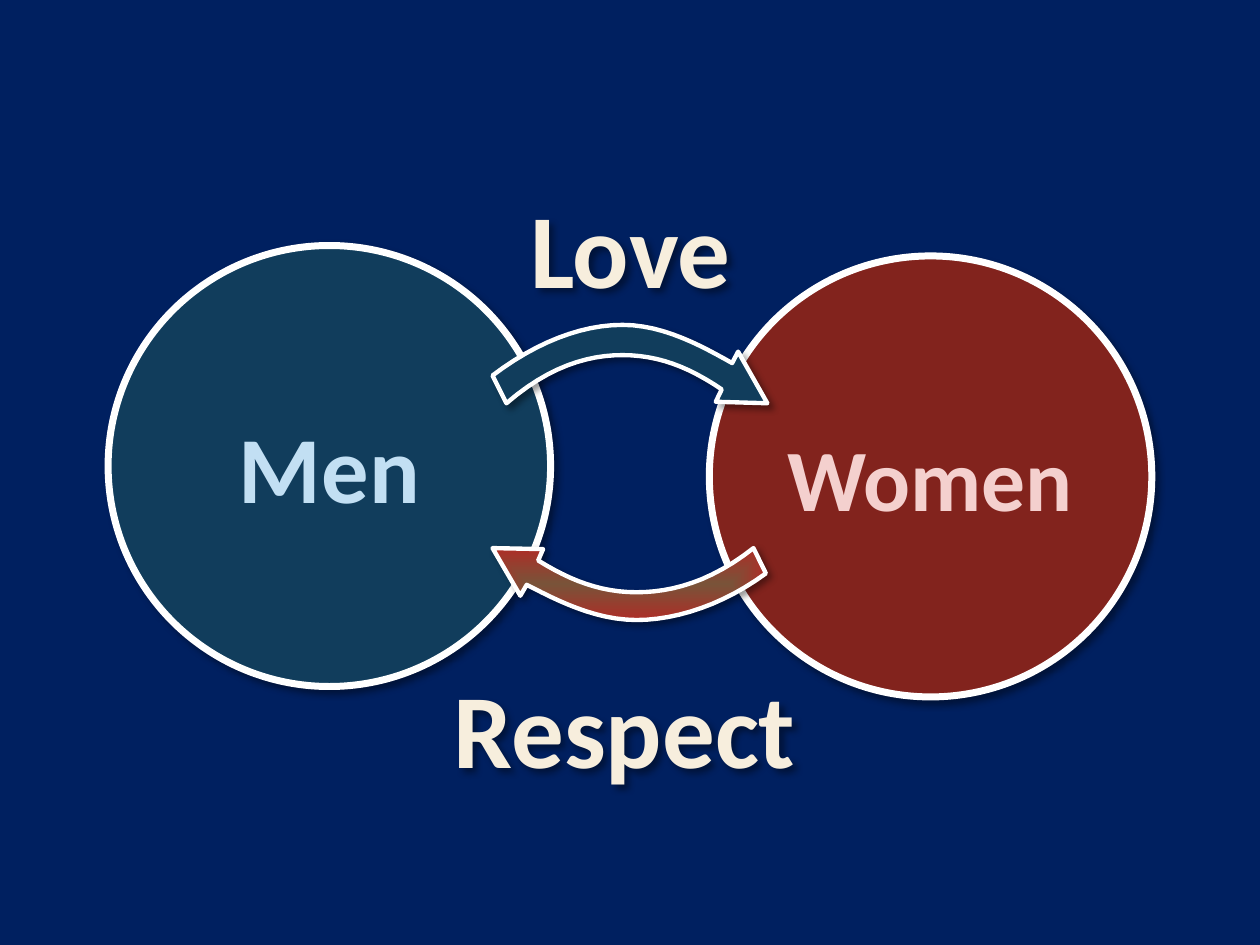
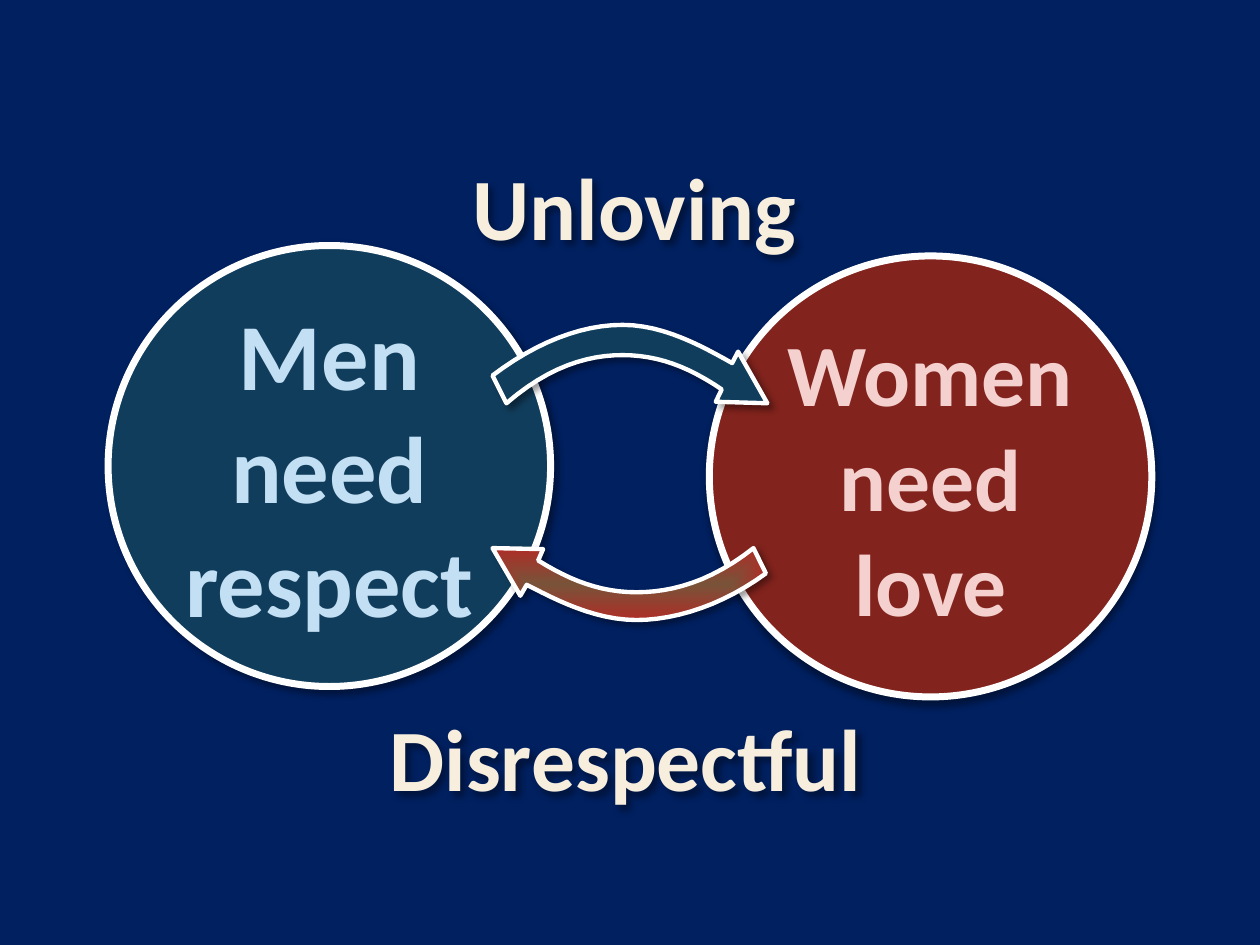
from lxml.etree import SubElement
from pptx import Presentation
from pptx.dml.color import RGBColor
from pptx.enum.shapes import MSO_SHAPE
from pptx.enum.text import MSO_ANCHOR, MSO_AUTO_SIZE, PP_ALIGN
from pptx.oxml.ns import qn
from pptx.util import Cm, Pt

NAVY = "002060"
BLUE = "113D5C"
RED = "82231D"
PALE_BLUE = "C2DFF3"
PALE_RED = "F4D0CE"
CREAM = "F7EEDD"
WHITE = "FFFFFF"
BROWN = "8B5027"
ARROW_CENTRE = "795339"
ARROW_EDGE = "AD2E27"
FONT = "Calibri"
CURVE_STEPS = 12

LOVE_ARROW = [
    (9.93, 7.57),
    (10.80, 6.91, 11.71, 6.55, 12.55, 6.55),
    (13.39, 6.55, 14.17, 6.99, 14.76, 7.32),
    (14.88, 7.09), (15.47, 8.13), (14.43, 8.10),
    (14.55, 7.85),
    (13.87, 7.39, 13.26, 7.16, 12.55, 7.16),
    (11.84, 7.16, 11.07, 7.39, 10.21, 8.13),
]
RESPECT_ARROW = [
    (15.44, 11.56),
    (14.61, 12.17, 13.67, 12.50, 12.83, 12.50),
    (11.99, 12.50, 11.20, 12.09, 10.62, 11.79),
    (10.49, 12.01), (9.93, 11.05), (10.95, 11.07),
    (10.85, 11.30),
    (11.51, 11.71, 12.12, 11.94, 12.83, 11.94),
    (13.54, 11.94, 14.33, 11.73, 15.19, 11.05),
]


def colour(value):
    return RGBColor.from_string(value)


def add_shadow(shape, angle=45):
    shape.shadow.inherit = False
    effects = shape._element.spPr.find(qn("a:effectLst"))
    shadow = SubElement(effects, qn("a:outerShdw"), blurRad=str(Pt(4)),
                        dist=str(Pt(3)), dir=str(angle * 60000),
                        algn="ctr", rotWithShape="0")
    black = SubElement(shadow, qn("a:srgbClr"), val="000000")
    SubElement(black, qn("a:alpha"), val="40000")


def set_outline(shape, width):
    shape.line.color.rgb = colour(WHITE)
    shape.line.width = Pt(width)


def write_text(frame, text, size, text_colour):
    frame.word_wrap = True
    para = frame.paragraphs[0]
    para.text = text
    para.alignment = PP_ALIGN.CENTER
    para.font.name = FONT
    para.font.size = Pt(size)
    para.font.bold = True
    para.font.color.rgb = colour(text_colour)
    return para


def outline_letters(para):
    properties = para._p.pPr.find(qn("a:defRPr"))
    line = SubElement(properties, qn("a:ln"), w=str(Pt(1)))
    fill = SubElement(line, qn("a:solidFill"))
    SubElement(fill, qn("a:srgbClr"), val=BROWN)
    properties.insert(0, line)


def add_circle(page, left, top, fill, text, size, text_colour, angle=45):
    circle = page.shapes.add_shape(MSO_SHAPE.OVAL, Cm(left), Cm(top), Cm(8.92), Cm(8.89))
    circle.fill.solid()
    circle.fill.fore_color.rgb = colour(fill)
    set_outline(circle, 4)
    add_shadow(circle, angle)
    frame = circle.text_frame
    frame.margin_left = frame.margin_right = 0
    frame.vertical_anchor = MSO_ANCHOR.MIDDLE
    outline_letters(write_text(frame, text, size, text_colour))


def add_label(page, left, top, width, height, text, size):
    box = page.shapes.add_textbox(Cm(left), Cm(top), Cm(width), Cm(height))
    add_shadow(box)
    write_text(box.text_frame, text, size, CREAM)
    box.text_frame.auto_size = MSO_AUTO_SIZE.SHAPE_TO_FIT_TEXT


def curve_points(start, segment):
    controls = [start, segment[0:2], segment[2:4], segment[4:6]]
    for step in range(1, CURVE_STEPS + 1):
        t = step / CURVE_STEPS
        weights = ((1 - t) ** 3, 3 * t * (1 - t) ** 2, 3 * t ** 2 * (1 - t), t ** 3)
        yield tuple(sum(weight * point[axis] for weight, point in zip(weights, controls))
                    for axis in (0, 1))


def add_arrow(page, segments):
    points = [segments[0]]
    for segment in segments[1:]:
        points.extend([segment] if len(segment) == 2 else curve_points(points[-1], segment))
    vertices = [(Cm(x), Cm(y)) for x, y in points]
    builder = page.shapes.build_freeform(*vertices[0])
    builder.add_line_segments(vertices[1:], close=True)
    arrow = builder.convert_to_shape()
    set_outline(arrow, 2.5)
    add_shadow(arrow)
    return arrow


def fill_from_centre(shape, centre, edge):
    shape.fill.gradient()
    for stop, position, value in zip(shape.fill.gradient_stops, (0, 1), (centre, edge)):
        stop.position = position
        stop.color.rgb = colour(value)
    gradient = shape._element.spPr.find(qn("a:gradFill"))
    gradient.remove(gradient.find(qn("a:lin")))
    rectangle = SubElement(gradient, qn("a:path"), path="rect")
    SubElement(rectangle, qn("a:fillToRect"), l="50000", t="50000", r="50000", b="50000")


def add_cycle(deck, men, women, upper_label, lower_label, women_angle=45):
    page = deck.slides.add_slide(deck.slide_layouts[6])
    add_circle(page, 2.18, 4.95, BLUE, men, 54, PALE_BLUE)
    add_circle(page, 14.3, 5.16, RED, women, 50, PALE_RED, women_angle)
    respect_arrow = add_arrow(page, RESPECT_ARROW)
    fill_from_centre(respect_arrow, ARROW_CENTRE, ARROW_EDGE)
    add_label(page, *upper_label)
    add_label(page, *lower_label)
    love_arrow = add_arrow(page, LOVE_ARROW)
    love_arrow.fill.solid()
    love_arrow.fill.fore_color.rgb = colour(BLUE)


def main():
    deck = Presentation()
    deck.slide_width = Cm(25.4)
    deck.slide_height = Cm(19.05)
    background = deck.slide_master.background.fill
    background.solid()
    background.fore_color.rgb = colour(NAVY)
    add_cycle(deck, "Men", "Women",
              (8.94, 3.58, 7.54, 2.82, "Love", 60),
              (8.33, 13.26, 8.53, 2.82, "Respect", 60))
    add_cycle(deck, "Men need respect", "Women need love",
              (8.53, 2.97, 8.53, 2.39, "Unloving", 50),
              (6.76, 14.07, 11.71, 2.39, "Disrespectful", 50),
              women_angle=90)
    deck.save("out.pptx")


if __name__ == "__main__":
    main()
